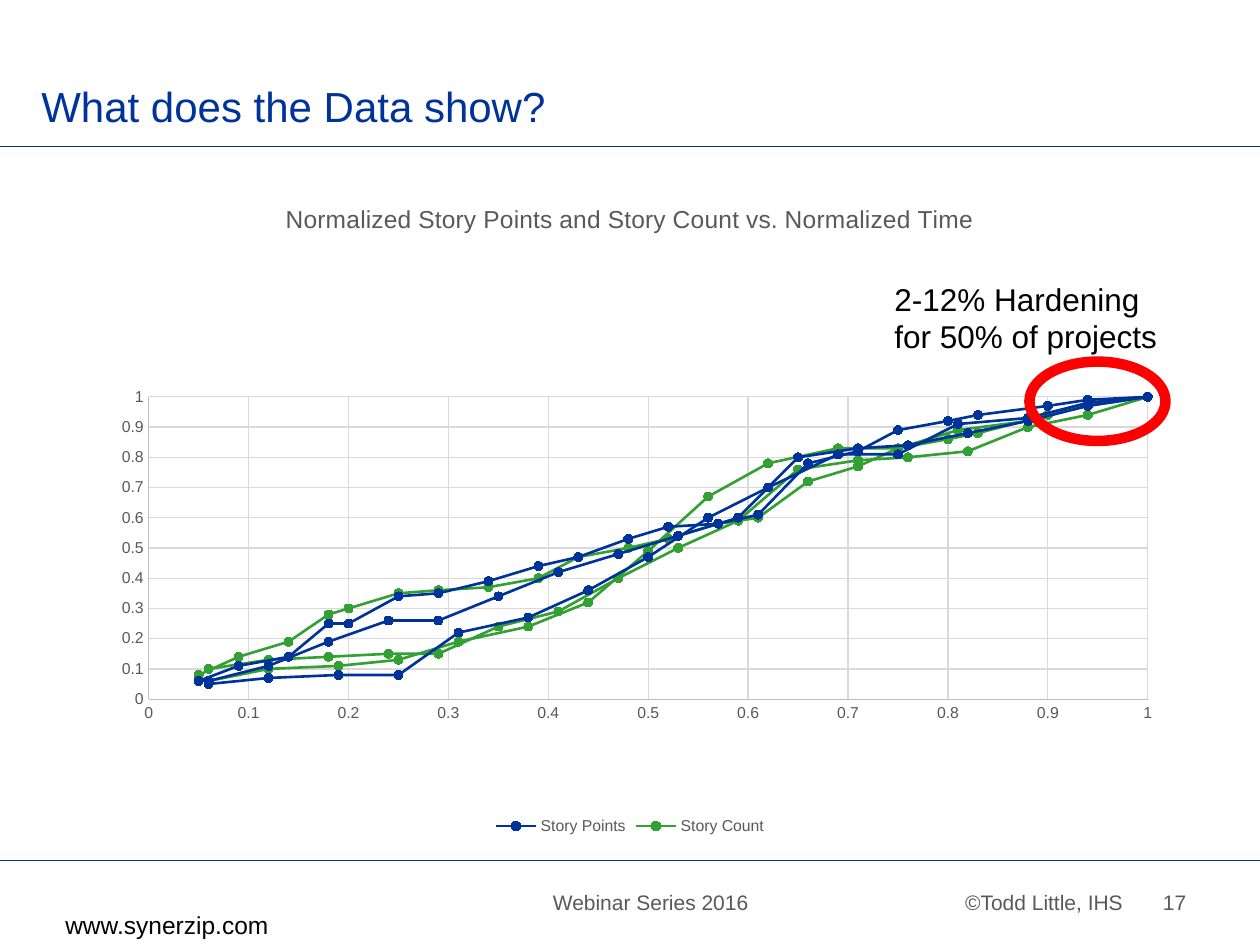
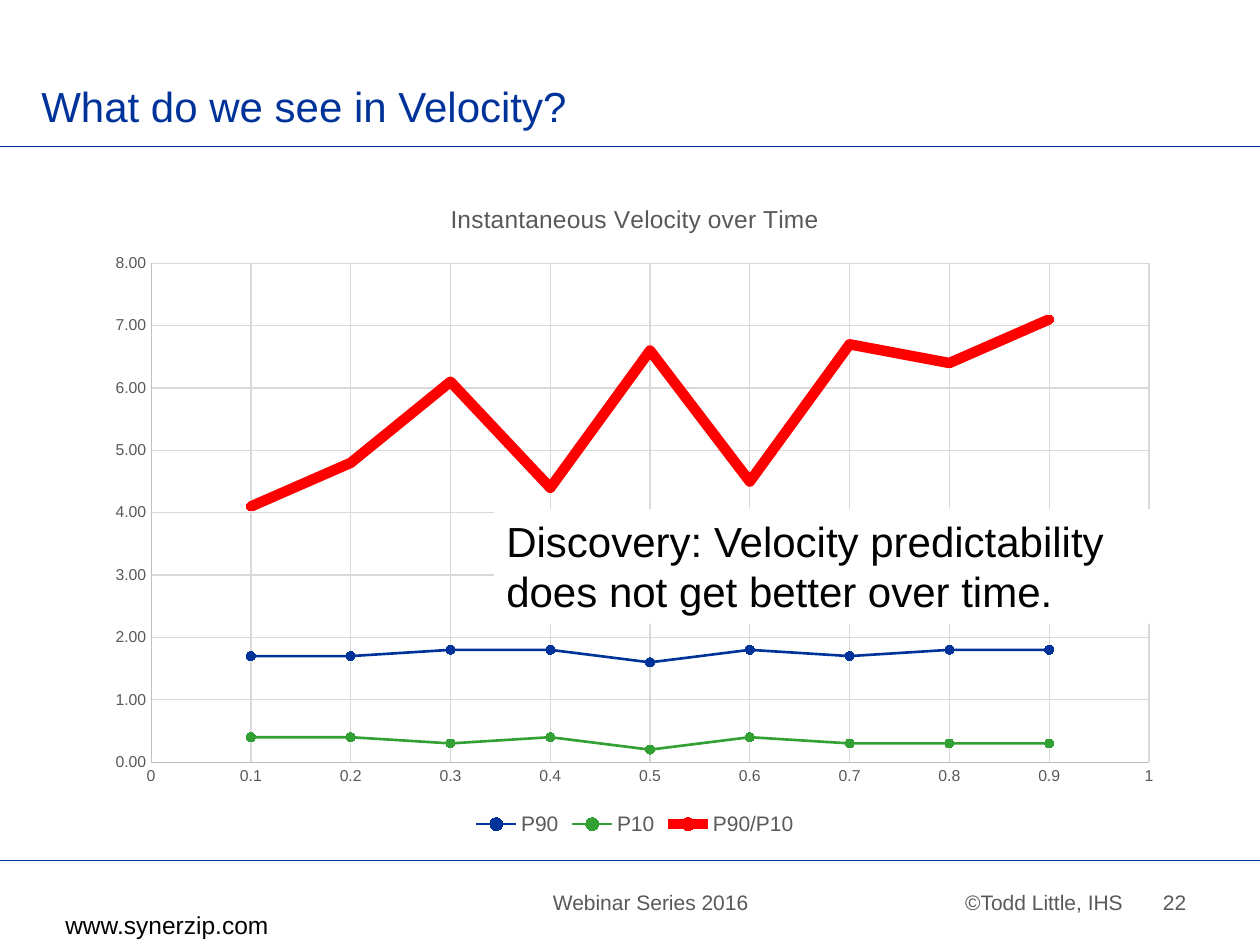
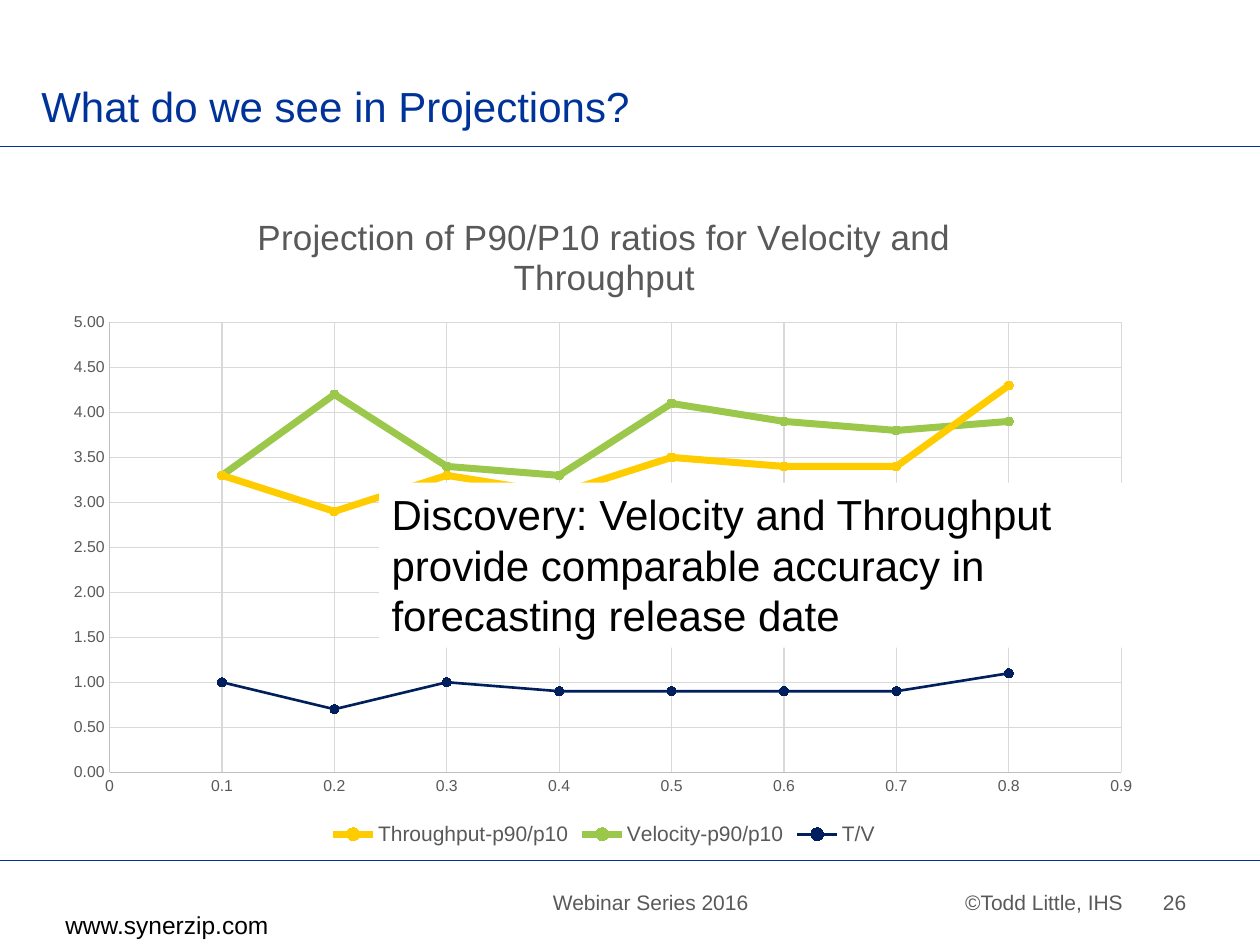
from itertools import chain
from lxml import etree
from pptx import Presentation
from pptx.chart import data
from pptx.dml.color import RGBColor
from pptx.enum import chart as ch, shapes, text
from pptx.oxml import parse_xml
from pptx.oxml.ns import qn
from pptx.util import Inches, Pt

FONT = "Arial"
BLUE, GREEN, RED, GOLD = "003399", "32A032", "FF0000", "FFCC00"
LIME, NAVY, GREY, BLACK, WHITE = "9BC84B", "001F5C", "595959", "000000", "FFFFFF"
AXIS, GRID = "BFBFBF", "D9D9D9"
GAP = [(0, None)]

# Normalized projects: time, then points and count at each step
times = [
    [.05, .09, .14, .18, .2, .25, .29, .34, .39, .43, .48,
     .52, .57, .61, .66, .71, .75, .8, .83, .9, .94, 1],
    [round(k / 16, 2) for k in range(1, 17)],
    [round(k / 17, 2) for k in range(1, 18)],
]
points = [
    [.06, .11, .14, .25, .25, .34, .35, .39, .44, .47, .53,
     .57, .58, .61, .78, .82, .89, .92, .94, .97, .99, 1],
    [.05, .07, .08, .08, .22, .27, .36, .47, .6, .7, .81, .81, .91, .93, .98, 1],
    [.06, .11, .19, .26, .26, .34, .42, .48, .54, .6, .8, .83, .84, .88, .92, .97, 1],
]
counts = [
    [.08, .14, .19, .28, .3, .35, .36, .37, .4, .47, .5,
     .53, .58, .6, .72, .77, .83, .86, .88, .94, .97, 1],
    [.06, .1, .11, .13, .19, .24, .32, .49, .67, .78, .83, .83, .89, .92, .98, 1],
    [.1, .13, .14, .15, .15, .24, .29, .4, .5, .59, .76, .79, .8, .82, .9, .94, 1],
]


def join(runs):
    """Chain the projects, with a break in the line between them."""
    parts = [GAP + list(zip(t, r)) for t, r in zip(times, runs)]
    return list(chain(*parts))[1:]


def tenths(*vals):
    return [(k / 10, v) for k, v in enumerate(vals, 1)]


# Series: name, points, colour, line width, marker colour
# Axes: maximum, step, number format
SLIDES = [
    dict(
        title="What does the Data show?", page=17,
        head="Normalized Story Points and Story Count vs. Normalized Time",
        size=14, key=9, box=(.5, 1.42, 9, 5.25), plot=(1.18, 3.15, 7.93, 2.4),
        x=(1, .1, "General"), y=(1, .1, "General"),
        series=[("Story Points", join(points), BLUE, 1.5, BLUE),
                ("Story Count", join(counts), GREEN, 1.5, GREEN)],
        note=("2-12% Hardening for 50% of projects", (7, 2.17, 2.33, .71), 18, None),
        ring=(8.17, 2.87, 1.08, .63)),
    dict(
        title="What do we see in Velocity?", page=22,
        head="Instantaneous Velocity over Time",
        size=14, key=12, box=(.75, 1.42, 8.58, 5.25), plot=(1.2, 2.09, 7.92, 3.96),
        x=(1, .1, "General"), y=(8, 1, "0.00"),
        series=[
            ("P90", tenths(1.7, 1.7, 1.8, 1.8, 1.6, 1.8, 1.7, 1.8, 1.8), BLUE, 1.5, BLUE),
            ("P10", tenths(.4, .4, .3, .4, .2, .4, .3, .3, .3), GREEN, 1.5, GREEN),
            ("P90/P10", tenths(4.1, 4.8, 6.1, 4.4, 6.6, 4.5, 6.7, 6.4, 7.1), RED, 6, GOLD)],
        note=("Discovery: Velocity predictability does not get better over time.",
              (3.92, 4.04, 5.33, .91), 24, WHITE)),
    dict(
        title="What do we see in Projections?", page=26,
        head="Projection of P90/P10 ratios for Velocity and Throughput",
        size=20, key=12, box=(.42, 1.5, 8.75, 5.25), plot=(.87, 2.56, 8.03, 3.57),
        x=(.9, .1, "General"), y=(5, .5, "0.00"),
        series=[
            ("Throughput-p90/p10", tenths(3.3, 2.9, 3.3, 3.1, 3.5, 3.4, 3.4, 4.3), GOLD, 4, GOLD),
            ("Velocity-p90/p10", tenths(3.3, 4.2, 3.4, 3.3, 4.1, 3.9, 3.8, 3.9), LIME, 4, LIME),
            ("T/V", tenths(1, .7, 1, .9, .9, .9, .9, 1.1), NAVY, 1.5, NAVY)],
        note=("Discovery: Velocity and Throughput provide comparable accuracy in "
              "forecasting release date", (3.01, 3.83, 6.17, 1.31), 24, WHITE)),
]


def rgb(code):
    return RGBColor.from_string(code)


def style(font, size, color):
    font.name, font.size, font.bold = FONT, Pt(size), False
    font.color.rgb = rgb(color)


def stroke(line, color, width):
    line.color.rgb = rgb(color)
    line.width = Pt(width)


def paint(fill, color):
    fill.solid()
    fill.fore_color.rgb = rgb(color)


def label(slide, words, box, size, color=BLACK, fill=None, align=None, wrap=True):
    shape = slide.shapes.add_textbox(*map(Inches, box))
    frame = shape.text_frame
    frame.word_wrap = wrap
    if fill:
        paint(shape.fill, fill)
    para = frame.paragraphs[0]
    para.alignment = align
    run = para.add_run()
    run.text = words
    style(run.font, size, color)
    return frame


def rule(slide, y):
    line = slide.shapes.add_connector(
        shapes.MSO_CONNECTOR.STRAIGHT, 0, Inches(y), Inches(10), Inches(y))
    stroke(line.line, BLUE, .5)
    etree.SubElement(line._element.spPr, qn("a:effectLst"))


def frame_up(slide, title, page):
    """Title, rules and footer shared by all slides."""
    rule(slide, 1.16)
    rule(slide, 6.83)
    label(slide, "Webinar Series 2016", (3.75, 7.01, 2.83, .3), 12, GREY,
          align=text.PP_ALIGN.CENTER)
    foot = label(slide, f"©Todd Little, IHS\t{page}", (7.5, 7.01, 2.08, .3), 12, GREY)
    foot.margin_left = Inches(.16)
    props = foot.paragraphs[0]._p.get_or_add_pPr()
    tabs = etree.SubElement(props, qn("a:tabLst"))
    etree.SubElement(tabs, qn("a:tab"), pos=str(Inches(1.57)), algn="l")
    label(slide, "www.synerzip.com", (.42, 7.17, 1.83, .34), 14, wrap=False)
    head = label(slide, title, (.23, .15, 8.28, .94), 24, BLUE)
    head.vertical_anchor = text.MSO_ANCHOR.BOTTOM


def set_axis(axis, top, step, form):
    axis.minimum_scale, axis.maximum_scale, axis.major_unit = 0, top, step
    axis.major_tick_mark = axis.minor_tick_mark = ch.XL_TICK_MARK.NONE
    axis.has_major_gridlines = True
    stroke(axis.major_gridlines.format.line, GRID, .75)
    stroke(axis.format.line, AXIS, .75)
    style(axis.tick_labels.font, 9, GREY)
    axis.tick_labels.number_format = form
    axis.tick_labels.number_format_is_linked = False


def place_plot(chart, box, plot):
    """Pin the inner plot area, as fractions of the chart box."""
    left, top, wide, high = box
    parts = dict(x=(plot[0] - left) / wide, y=(plot[1] - top) / high,
                 w=plot[2] / wide, h=plot[3] / high)
    sizes = "".join(f'<c:{k} val="{v:.4f}"/>' for k, v in parts.items())
    layout = parse_xml(
        '<c:layout xmlns:c="http://schemas.openxmlformats.org/drawingml/2006/chart">'
        '<c:manualLayout><c:layoutTarget val="inner"/><c:xMode val="edge"/>'
        f'<c:yMode val="edge"/>{sizes}</c:manualLayout></c:layout>')
    area = chart.element.find(".//" + qn("c:plotArea"))
    for old in area.findall(qn("c:layout")):
        area.remove(old)
    area.insert(0, layout)


def add_plot(slide, item):
    table = data.XyChartData()
    for name, dots, *_ in item["series"]:
        row = table.add_series(name)
        for x, y in dots:
            row.add_data_point(x, y)
    chart = slide.shapes.add_chart(
        ch.XL_CHART_TYPE.XY_SCATTER_LINES, *map(Inches, item["box"]), table).chart

    # A break is a missing point
    for value in list(chart.element.iter(qn("c:v"))):
        if value.text == "None":
            spot = value.getparent()
            spot.getparent().remove(spot)

    style(chart.font, 10, BLACK)
    chart.has_title = True
    run = chart.chart_title.text_frame.paragraphs[0].add_run()
    run.text = item["head"]
    style(run.font, item["size"], GREY)
    chart.has_legend = True
    chart.legend.position = ch.XL_LEGEND_POSITION.BOTTOM
    chart.legend.include_in_layout = False
    style(chart.legend.font, item["key"], GREY)
    set_axis(chart.category_axis, *item["x"])
    set_axis(chart.value_axis, *item["y"])
    place_plot(chart, item["box"], item["plot"])

    plot = chart.plots[0]
    plot.vary_by_categories = False
    for line, (_, _, color, width, dot) in zip(plot.series, item["series"]):
        line.smooth = False
        stroke(line.format.line, color, width)
        line.marker.style, line.marker.size = ch.XL_MARKER_STYLE.CIRCLE, 5
        paint(line.marker.format.fill, dot)
        stroke(line.marker.format.line, dot, .75)


def add_ring(slide, box):
    ring = slide.shapes.add_shape(shapes.MSO_SHAPE.OVAL, *map(Inches, box))
    ring.shadow.inherit = False
    ring.fill.background()
    stroke(ring.line, RED, 6)


def main():
    deck = Presentation()
    deck.slide_width, deck.slide_height = Inches(10), Inches(7.5)
    for item in SLIDES:
        slide = deck.slides.add_slide(deck.slide_layouts[6])
        frame_up(slide, item["title"], item["page"])
        add_plot(slide, item)
        words, box, size, fill = item["note"]
        label(slide, words, box, size, fill=fill)
        if "ring" in item:
            add_ring(slide, item["ring"])
    deck.save("out.pptx")


if __name__ == "__main__":
    main()
